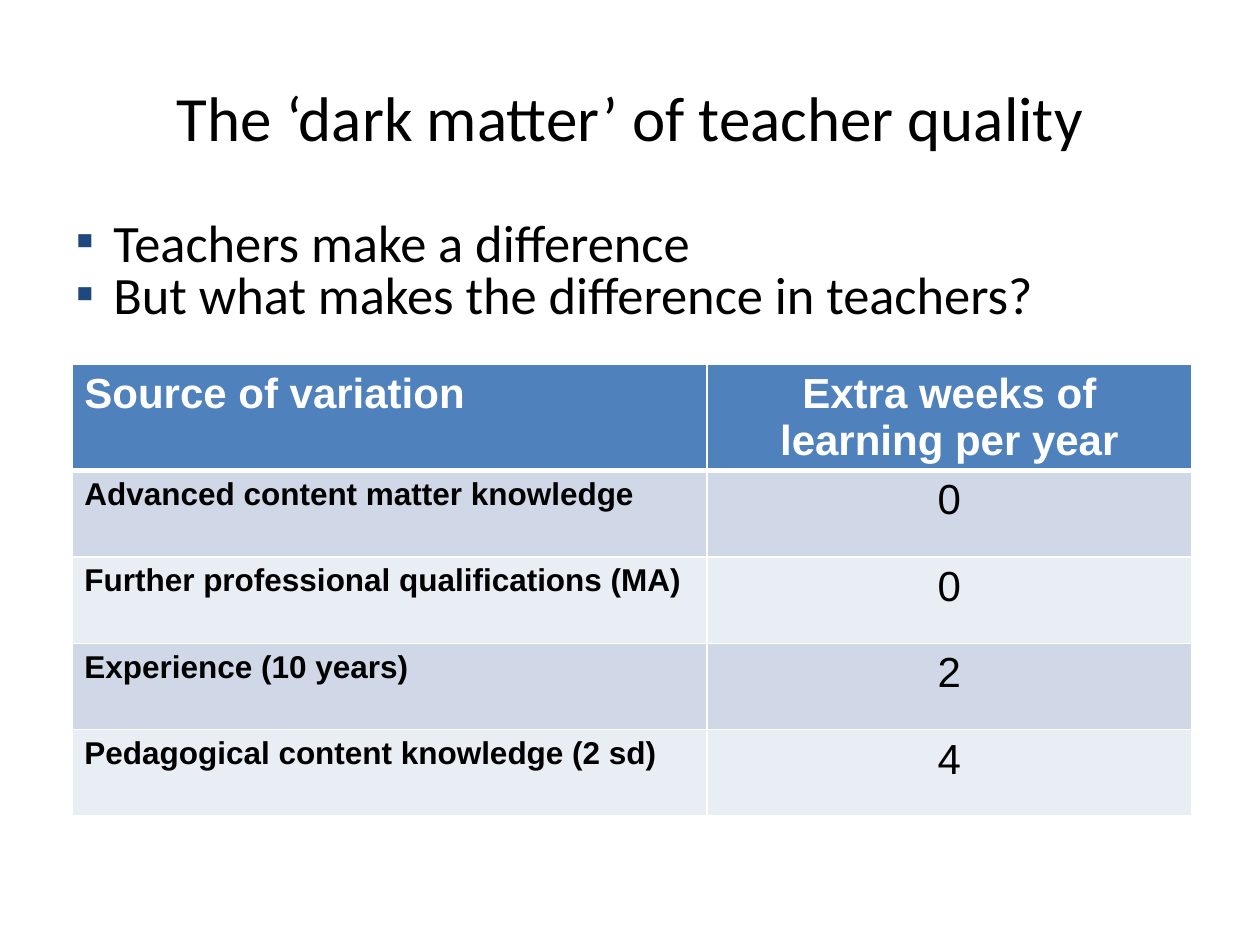
from lxml.etree import SubElement
from pptx import Presentation
from pptx.dml.color import RGBColor
from pptx.enum.text import MSO_ANCHOR, MSO_AUTO_SIZE, PP_ALIGN
from pptx.oxml.ns import qn
from pptx.util import Inches, Pt

BLACK = RGBColor(0x00, 0x00, 0x00)
WHITE = RGBColor(0xFF, 0xFF, 0xFF)
NAVY = RGBColor(0x1F, 0x49, 0x7D)
HEADER_BLUE = RGBColor(0x4F, 0x81, 0xBD)
BANDS = (RGBColor(0xD0, 0xD8, 0xE8), RGBColor(0xE9, 0xED, 0xF4))

BULLETS = (
    "Teachers make a difference",
    "But what makes the difference in teachers?",
)
HEADER = ("Source of variation", "Extra weeks of learning per year")
EFFECTS = (
    ("Advanced content matter knowledge", "0"),
    ("Further professional qualifications (MA)", "0"),
    ("Experience (10 years)", "2"),
    ("Pedagogical content knowledge (2 sd)", "4"),
)


def place(shape, left, top, width, height):
    shape.left, shape.top = Inches(left), Inches(top)
    shape.width, shape.height = Inches(width), Inches(height)


def style_font(para, name, size, color, bold=False):
    font = para.font
    font.name, font.size, font.bold = name, Pt(size), bold
    font.color.rgb = color


def add_bullet(para):
    properties = para._p.get_or_add_pPr()
    properties.set("marL", str(Inches(0.3)))
    properties.set("indent", str(Inches(-0.3)))
    color = SubElement(properties, qn("a:buClr"))
    SubElement(color, qn("a:srgbClr"), val=str(NAVY))
    SubElement(properties, qn("a:buFont"), typeface="Arial")
    SubElement(properties, qn("a:buChar"), char="▪")


def set_title(box, text):
    place(box, 0.5, 0.3, 9, 1.25)
    box.text_frame.text = text
    box.text_frame.vertical_anchor = MSO_ANCHOR.MIDDLE
    para = box.text_frame.paragraphs[0]
    para.alignment = PP_ALIGN.CENTER
    style_font(para, "Calibri", 36, BLACK)


def set_bullets(box, lines):
    place(box, 0.5, 1.75, 8.92, 1.12)
    frame = box.text_frame
    frame.text = "\n".join(lines)
    frame.auto_size = MSO_AUTO_SIZE.NONE
    for para in frame.paragraphs:
        para.line_spacing = 0.7
        para.space_before = Pt(5)
        add_bullet(para)
        style_font(para, "Calibri", 30, BLACK)


def set_borders(cell, bottom_width):
    """Draw white lines on all four sides, before the fill is set."""
    properties = cell._tc.get_or_add_tcPr()
    for side, width in (("L", 1), ("R", 1), ("T", 1), ("B", bottom_width)):
        line = SubElement(properties, qn(f"a:ln{side}"), w=str(Pt(width)))
        fill = SubElement(line, qn("a:solidFill"))
        SubElement(fill, qn("a:srgbClr"), val=str(WHITE))


def fill_cell(cell, text, row, column):
    is_header = row == 0
    is_label = column == 0
    set_borders(cell, 3 if is_header else 1)
    cell.fill.solid()
    cell.fill.fore_color.rgb = HEADER_BLUE if is_header else BANDS[(row - 1) % 2]
    cell.text = text
    para = cell.text_frame.paragraphs[0]
    para.alignment = PP_ALIGN.LEFT if is_label else PP_ALIGN.CENTER
    style_font(para, "Arial", 18 if is_label and not is_header else 24,
               WHITE if is_header else BLACK, is_header or is_label)


def add_effects_table(page):
    rows = (HEADER, *EFFECTS)
    frame = page.shapes.add_table(len(rows), len(HEADER), Inches(0.57), Inches(2.89),
                                  Inches(8.89), Inches(3.43))
    table = frame.table
    for column, width in zip(table.columns, (5.04, 3.85)):
        column.width = Inches(width)
    for row, texts in enumerate(rows):
        for column, text in enumerate(texts):
            fill_cell(table.cell(row, column), text, row, column)


def main():
    deck = Presentation()
    deck.slide_width, deck.slide_height = Inches(10), Inches(7.5)
    page = deck.slides.add_slide(deck.slide_layouts[1])

    # Title and opening points
    set_title(page.shapes.title, "The ‘dark matter’ of teacher quality")
    set_bullets(page.placeholders[1], BULLETS)

    # Effect of each source of variation
    add_effects_table(page)
    deck.save("out.pptx")


if __name__ == "__main__":
    main()
